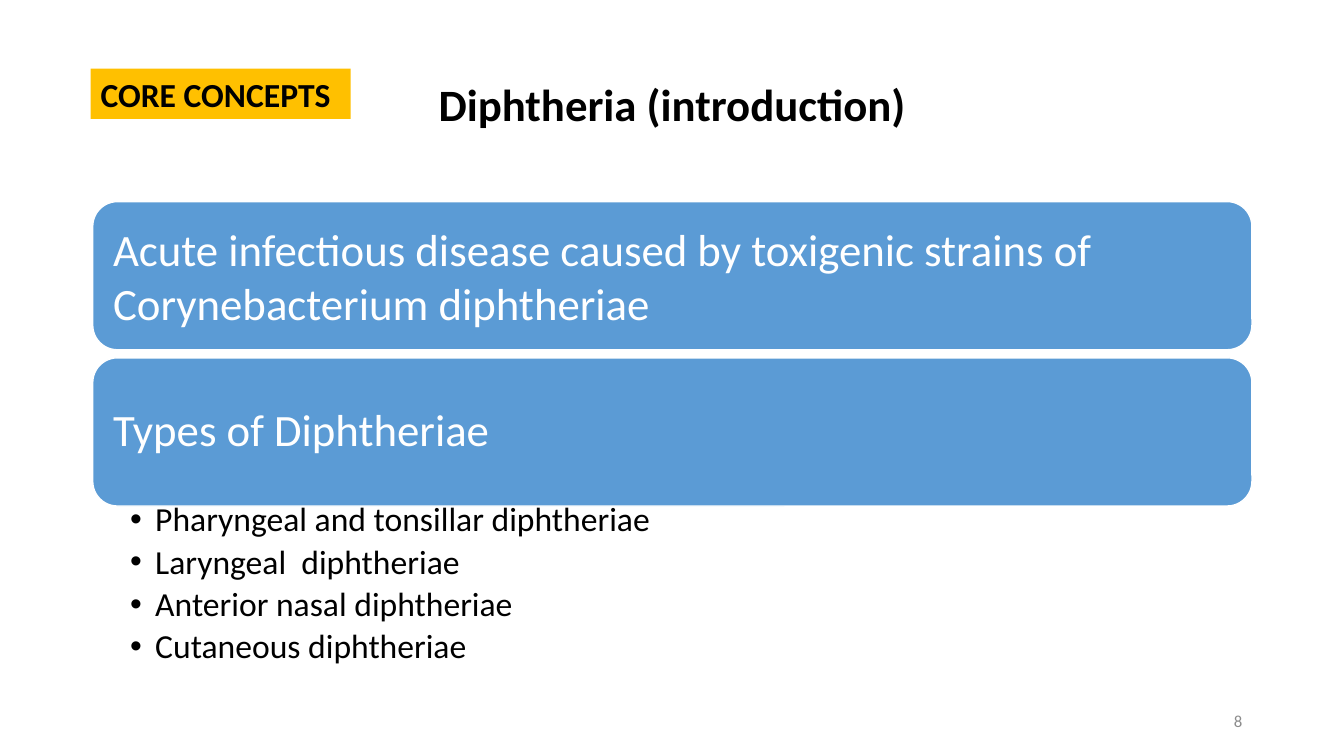
from lxml import etree
from pptx import Presentation
from pptx import util as u
from pptx.dml.color import RGBColor
from pptx.enum import shapes, text
from pptx.oxml import ns

COLORS = {
    "black": "000000",
    "white": "FFFFFF",
    "banner": "5B9BD5",
    "tag": "FFC000",
    "number": "8C8C8C",
}
LEFT, WIDTH = 6.9, 86.25
BANNER_TOP, BANNER_HEIGHT, BANNER_STEP = 26.67, 19.6, 20.67
BANNERS = [
    ("Acute infectious disease caused by toxigenic strains of Corynebacterium diphtheriae", 1.0),
    ("Types of Diphtheriae", 0.9),
]
DIPHTHERIA_TYPES = [
    "Pharyngeal and tonsillar diphtheriae",
    "Laryngeal  diphtheriae",
    "Anterior nasal diphtheriae",
    "Cutaneous diphtheriae",
]


def color(name):
    """Return the named colour of the palette."""
    return RGBColor.from_string(COLORS[name])


def write(paragraph, content, size=24, ink="black", bold=False, align="LEFT", spacing=1.0, after=0):
    """Put formatted text into a paragraph."""
    paragraph.alignment = getattr(text.PP_ALIGN, align)
    paragraph.line_spacing = spacing
    paragraph.space_after = u.Pt(after)
    run = paragraph.add_run()
    run.text = content
    run.font.name = "Calibri"
    run.font.size = u.Pt(size)
    run.font.bold = bold
    run.font.color.rgb = color(ink)


class ConceptSlide:
    """Hold the current slide and place elements in percent of its size."""

    def __init__(self, presentation):
        """Add a blank slide to the presentation."""
        self.width = presentation.slide_width
        self.height = presentation.slide_height
        self.slide = presentation.slides.add_slide(presentation.slide_layouts[6])

    def place(self, left, top, width, height):
        """Turn percentages into slide lengths."""
        return [round(share * side / 100) for share, side in
                zip((left, top, width, height), (self.width, self.height) * 2)]

    def frame(self, shape, anchor="MIDDLE", insets=(0.1, 0.05, 0.1, 0.05)):
        """Set up the text frame of a shape."""
        frame = shape.text_frame
        frame.word_wrap = True
        frame.vertical_anchor = getattr(text.MSO_ANCHOR, anchor)
        frame.margin_left, frame.margin_top, frame.margin_right, frame.margin_bottom = map(u.Inches, insets)
        return frame

    def label(self, content, box, **style):
        """Add a plain line of text."""
        shape = self.slide.shapes.add_textbox(*self.place(*box))
        write(self.frame(shape).paragraphs[0], content, **style)

    def panel(self, content, box, kind, fill, line=None, insets=(0.1, 0.05, 0.1, 0.05), **style):
        """Add a filled shape with text."""
        shape = self.slide.shapes.add_shape(kind, *self.place(*box))
        shape.shadow.inherit = False
        shape.fill.solid()
        shape.fill.fore_color.rgb = color(fill)
        if line:
            shape.line.color.rgb = color(line)
            shape.line.width = u.Pt(1)
        else:
            shape.line.fill.background()
        write(self.frame(shape, insets=insets).paragraphs[0], content, **style)

    def bullets(self, items, box, **style):
        """Add a bulleted list."""
        shape = self.slide.shapes.add_textbox(*self.place(*box))
        frame = self.frame(shape, "TOP", (0.37, 0.03, 0.19, 0.03))
        for index, item in enumerate(items):
            paragraph = frame.add_paragraph() if index else frame.paragraphs[0]
            write(paragraph, item, **style)
            properties = paragraph._p.get_or_add_pPr()
            properties.set("marL", str(u.Inches(0.25)))
            properties.set("indent", str(u.Inches(-0.25)))
            etree.SubElement(properties, ns.qn("a:buFont"), typeface="Arial")
            etree.SubElement(properties, ns.qn("a:buChar"), char="•")


def main():
    """Build and save the diphtheria slide."""
    presentation = Presentation()
    presentation.slide_width = u.Inches(13.33)
    presentation.slide_height = u.Inches(7.5)
    page = ConceptSlide(presentation)
    page.label("Diphtheria (introduction)", (LEFT, 4.53, WIDTH, 19.33),
               size=32, bold=True, align="CENTER", spacing=0.9)
    for row, (content, spacing) in enumerate(BANNERS):
        page.panel(content, (LEFT, BANNER_TOP + row * BANNER_STEP, WIDTH, BANNER_HEIGHT),
                   shapes.MSO_SHAPE.ROUNDED_RECTANGLE, "banner", line="white",
                   insets=(0.13, 0.13, 0.13, 0.13), size=32, ink="white", spacing=spacing)
    page.bullets(DIPHTHERIA_TYPES, (LEFT, 66.13, WIDTH, 24), spacing=0.9, after=4.3)
    page.panel("CORE CONCEPTS", (6.75, 9.07, 19.35, 6.67),
               shapes.MSO_SHAPE.RECTANGLE, "tag", bold=True)
    page.label("8", (70.67, 92.67, 22.5, 5.33), size=12, ink="number", align="RIGHT")
    presentation.save("out.pptx")


if __name__ == "__main__":
    main()
